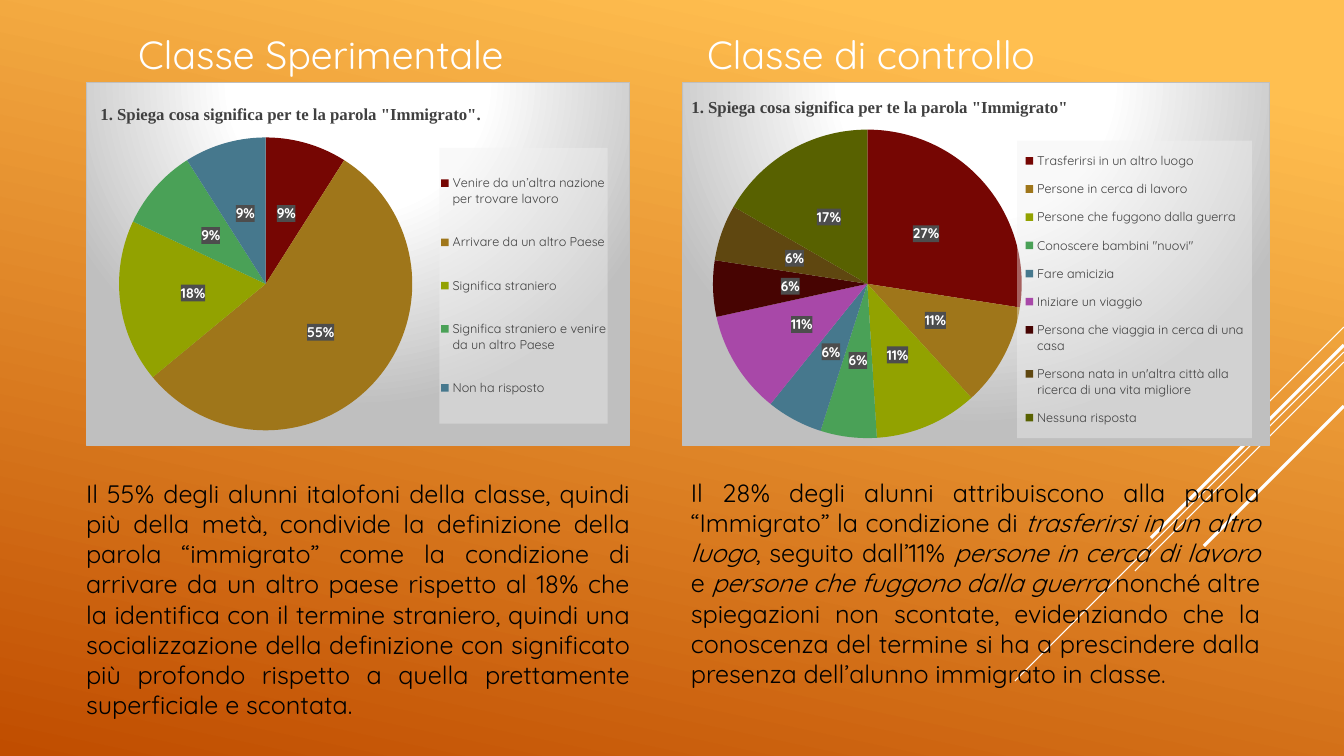
import pptx
import pptx.chart.data
import pptx.dml.color
import pptx.enum.chart
import pptx.enum.shapes
import pptx.enum.text
import pptx.oxml
import pptx.oxml.ns
import pptx.util

RGB = pptx.dml.color.RGBColor
WHITE = RGB(0xFF, 0xFF, 0xFF)
BLACK = RGB(0, 0, 0)
GREY = RGB(0x40, 0x40, 0x40)
AMBER = RGB(0xFF, 0xBF, 0x50)
RUST = RGB(0xC0, 0x4D, 0x00)
SLICES = [RGB(0x76, 0x06, 0x03), RGB(0x9F, 0x76, 0x1A), RGB(0x92, 0xA2, 0x00),
          RGB(0x4A, 0xA1, 0x57), RGB(0x46, 0x78, 0x8D), RGB(0xA8, 0x48, 0xA8),
          RGB(0x47, 0x04, 0x02), RGB(0x5F, 0x47, 0x10), RGB(0x58, 0x61, 0x00)]
FONT = "Quicksand"
PX = 914400 / 100.8
qn = pptx.oxml.ns.qn
NS = pptx.oxml.ns.nsdecls("a", "c")
ALIGN = pptx.enum.text.PP_ALIGN
ANCHOR = pptx.enum.text.MSO_ANCHOR

LABEL_BOX = f'<c:spPr {NS}><a:solidFill><a:srgbClr val="4D4D4D"/></a:solidFill></c:spPr>'
LEGEND_BOX = (f'<c:spPr {NS}><a:solidFill><a:srgbClr val="F2F2F2"><a:alpha val="39000"/>'
              '</a:srgbClr></a:solidFill></c:spPr>')
CHART_BOX = (f'<c:spPr {NS}><a:gradFill><a:gsLst>'
             '<a:gs pos="0"><a:srgbClr val="FFFFFF"/></a:gs>'
             '<a:gs pos="39000"><a:srgbClr val="FFFFFF"/></a:gs>'
             '<a:gs pos="100000"><a:srgbClr val="BFBFBF"/></a:gs></a:gsLst>'
             '<a:path path="circle"><a:fillToRect l="50000" t="-80000" r="50000" b="180000"/></a:path>'
             '</a:gradFill><a:ln w="9525"><a:solidFill><a:srgbClr val="BFBFBF"/></a:solidFill></a:ln></c:spPr>')


def write_text(tf, parts, size=18, color=BLACK, font=FONT, bold=False, align=ALIGN.LEFT, anchor=None):
    tf.word_wrap = True
    tf.auto_size = pptx.enum.text.MSO_AUTO_SIZE.NONE
    if anchor is not None:
        tf.vertical_anchor = anchor
    p = tf.paragraphs[0]
    p.alignment = align
    for i, text in enumerate(parts):
        r = p.add_run()
        r.text = text
        r.font.size = pptx.util.Pt(size)
        r.font.name = font
        r.font.bold = bold
        r.font.italic = i % 2 == 1
        r.font.color.rgb = color


def set_layout(el, index, inner=False, **box):
    for old in el.findall(qn("c:layout")):
        el.remove(old)
    target = '<c:layoutTarget val="inner"/>' if inner else ""
    modes = "".join(f'<c:{k}Mode val="edge"/>' for k in "xy")
    values = "".join(f'<c:{k} val="{v}"/>' for k, v in box.items())
    el.insert(index, pptx.oxml.parse_xml(
        f"<c:layout {NS}><c:manualLayout>{target}{modes}{values}</c:manualLayout></c:layout>"))


prs = pptx.Presentation()
prs.slide_width = round(1344 * PX)
prs.slide_height = round(756 * PX)
s = prs.slides.add_slide(prs.slide_layouts[4])

fill = s.background.fill
fill.gradient()
fill.gradient_angle = 258
for stop, position, color in zip(fill.gradient_stops, (0.1, 1), (AMBER, RUST)):
    stop.position = position
    stop.color.rgb = color

holders = {sp.placeholder_format.idx: sp for sp in s.placeholders}
for idx in (2, 4):
    holders[idx].element.getparent().remove(holders[idx].element)

for y1, x2, y2, width in [(327, 1243, 428, 0.75), (352, 1015, 681, 0.75), (362, 1135, 571, 0.75),
                          (345, 1151, 538, 2.25), (406, 1204, 546, 2.25)]:
    line = s.shapes.add_connector(pptx.enum.shapes.MSO_CONNECTOR.STRAIGHT,
                                  *(round(v * PX) for v in (1344, y1, x2, y2)))
    line.line.color.rgb = WHITE
    line.line.width = pptx.util.Pt(width)
    line.element.spPr.append(pptx.oxml.parse_xml(f"<a:effectLst {NS}/>"))

left_comment = [
    "Il 55% degli alunni italofoni della classe, quindi più della metà, condivide la definizione "
    "della parola “immigrato” come la condizione di arrivare da un altro paese rispetto al 18% che "
    "la identifica con il termine straniero, quindi una socializzazione della definizione con "
    "significato più profondo rispetto a quella prettamente superficiale e scontata."]
right_comment = [
    "Il 28% degli alunni attribuiscono alla parola “Immigrato” la condizione di ",
    "trasferirsi in un altro luogo", ", seguito dall’11% ", "persone in cerca di lavoro", " e ",
    "persone che fuggono dalla guerra",
    " nonché altre spiegazioni non scontate, evidenziando che la conoscenza del termine si ha "
    "a prescindere dalla presenza dell’alunno immigrato in classe."]
heading = dict(size=28, color=WHITE, anchor=ANCHOR.BOTTOM)
comment = dict(align=ALIGN.JUSTIFY)
right_box = s.shapes.add_textbox(0, 0, 0, 0)
for sp, box, parts, fmt in [
        (s.shapes.title, (76, 472, 564, 254), left_comment, dict(comment, anchor=ANCHOR.MIDDLE)),
        (holders[1], (128, 18, 513, 64), ["Classe Sperimentale"], heading),
        (holders[3], (697, 18, 514, 64), ["Classe di controllo"], heading),
        (right_box, (681, 472, 589, 254), right_comment, comment)]:
    sp.left, sp.top, sp.width, sp.height = (round(v * PX) for v in box)
    write_text(sp.text_frame, parts, **fmt)

pies = [
    dict(box=(86, 82, 544, 364), title='1. Spiega cosa significa per te la parola "Immigrato".',
         title_at=dict(x=0.02, y=0.05), plot_at=dict(x=0.06, y=0.15, w=0.54, h=0.81),
         legend_at=dict(x=0.65, y=0.18, w=0.31, h=0.76),
         answers=[("Venire da un’altra nazione per trovare lavoro", 9), ("Arrivare da un altro Paese", 55),
                  ("Significa straniero", 18), ("Significa straniero e venire da un altro Paese", 9),
                  ("Non ha risposto", 9)]),
    dict(box=(682, 82, 588, 364), title='1. Spiega cosa significa per te la parola "Immigrato"',
         title_at=dict(x=0.01, y=0.03), plot_at=dict(x=0.05, y=0.13, w=0.53, h=0.85),
         legend_at=dict(x=0.57, y=0.16, w=0.4, h=0.82),
         answers=[("Trasferirsi in un altro luogo", 28), ("Persone in cerca di lavoro", 11),
                  ("Persone che fuggono dalla guerra", 11), ('Conoscere bambini "nuovi"', 6),
                  ("Fare amicizia", 6), ("Iniziare un viaggio", 11),
                  ("Persona che viaggia in cerca di una casa", 6),
                  ("Persona nata in un'altra città alla ricerca di una vita migliore", 6),
                  ("Nessuna risposta", 17)]),
]
for pie in pies:
    data = pptx.chart.data.CategoryChartData()
    data.categories = [answer for answer, share in pie["answers"]]
    data.add_series("Series 1", [share for answer, share in pie["answers"]])
    chart = s.shapes.add_chart(pptx.enum.chart.XL_CHART_TYPE.PIE,
                               *(round(v * PX) for v in pie["box"]), data).chart
    root = chart.element.find(qn("c:chart"))
    root.addnext(pptx.oxml.parse_xml(CHART_BOX))
    chart.font.size = pptx.util.Pt(10)
    chart.font.name = FONT
    chart.font.color.rgb = WHITE

    chart.has_title = True
    write_text(chart.chart_title.text_frame, [pie["title"]], size=12, color=GREY,
               font="Times New Roman", bold=True)
    set_layout(root.find(qn("c:title")), 1, **pie["title_at"])
    set_layout(root.find(qn("c:plotArea")), 0, inner=True, **pie["plot_at"])

    chart.has_legend = True
    legend = chart.legend
    legend.position = pptx.enum.chart.XL_LEGEND_POSITION.RIGHT
    legend.include_in_layout = False
    legend.font.size = pptx.util.Pt(9)
    legend.font.name = FONT
    legend.font.color.rgb = GREY
    el = root.find(qn("c:legend"))
    set_layout(el, 1, **pie["legend_at"])
    el.find(qn("c:overlay")).addnext(pptx.oxml.parse_xml(LEGEND_BOX))

    plot = chart.plots[0]
    plot.vary_by_categories = True
    for i, color in enumerate(SLICES[:len(pie["answers"])]):
        slice_format = plot.series[0].points[i].format
        slice_format.fill.solid()
        slice_format.fill.fore_color.rgb = color
        slice_format.line.fill.background()
    plot.has_data_labels = True
    labels = plot.data_labels
    labels.show_percentage = True
    labels.show_value = False
    labels.number_format = "0%"
    labels.number_format_is_linked = False
    labels.position = pptx.enum.chart.XL_LABEL_POSITION.CENTER
    labels.font.size = pptx.util.Pt(10)
    labels.font.name = FONT
    labels.font.bold = True
    labels.font.color.rgb = WHITE
    root.find(".//" + qn("c:dLbls")).find(qn("c:numFmt")).addnext(pptx.oxml.parse_xml(LABEL_BOX))

prs.save("out.pptx")
